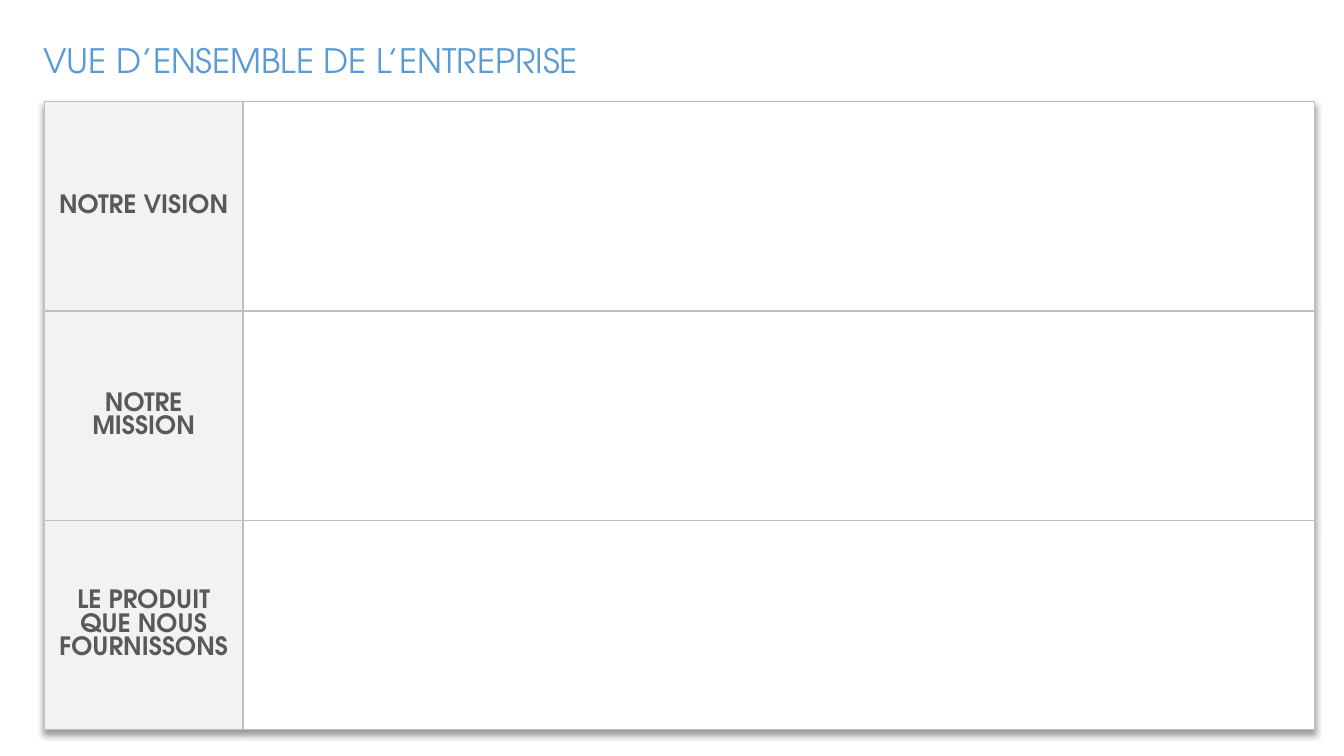
from dataclasses import dataclass

from lxml.etree import SubElement
from pptx import Presentation
from pptx.dml.color import RGBColor
from pptx.enum.text import MSO_ANCHOR, MSO_AUTO_SIZE, PP_ALIGN
from pptx.oxml import parse_xml
from pptx.oxml.ns import nsdecls, qn
from pptx.util import Inches, Pt


@dataclass(frozen=True)
class Theme:
    """Hold the colours, font and type sizes of the slide."""
    font: str = "TeX Gyre Adventor"
    heading: str = "5B9BD5"
    label: str = "595959"
    label_fill: str = "F2F2F2"
    answer_fill: str = "FFFFFF"
    border: str = "BFBFBF"
    heading_size: int = 24
    label_size: int = 18


THEME = Theme()
HEADING = "VUE D’ENSEMBLE DE L’ENTREPRISE"
TOPICS = ["NOTRE VISION", "NOTRE MISSION", "LE PRODUIT QUE NOUS FOURNISSONS"]


def write(frame, text, *, size, color, bold=False, align=PP_ALIGN.LEFT):
    """Write one formatted paragraph into a text frame."""
    paragraph = frame.paragraphs[0]
    paragraph.alignment = align
    run = paragraph.add_run()
    run.text = text
    run.font.name = THEME.font
    run.font.size = Pt(size)
    run.font.bold = bold
    run.font.color.rgb = RGBColor.from_string(color)


def style_cell(cell, fill):
    """Fill a cell and draw its four borders."""
    cell.vertical_anchor = MSO_ANCHOR.MIDDLE
    properties = cell._tc.get_or_add_tcPr()
    for side in ("a:lnL", "a:lnR", "a:lnT", "a:lnB"):
        line = SubElement(properties, qn(side), w=str(Pt(1)))
        SubElement(SubElement(line, qn("a:solidFill")), qn("a:srgbClr"), val=THEME.border)
    cell.fill.solid()
    cell.fill.fore_color.rgb = RGBColor.from_string(fill)


def add_heading(slide, left, top, width, height):
    """Place the slide heading in the title placeholder."""
    heading = slide.shapes.title
    heading.left, heading.top = Inches(left), Inches(top)
    heading.width, heading.height = Inches(width), Inches(height)
    frame = heading.text_frame
    frame.word_wrap = True
    frame.auto_size = MSO_AUTO_SIZE.SHAPE_TO_FIT_TEXT
    frame.vertical_anchor = MSO_ANCHOR.TOP
    write(frame, HEADING, size=THEME.heading_size, color=THEME.heading)


def add_overview(slide, left, top, width, height, label_width=1.97):
    """Place the overview table with one row per topic."""
    overview = slide.shapes.add_table(
        len(TOPICS), 2, Inches(left), Inches(top), Inches(width), Inches(height)
    ).table
    overview.first_row = overview.horz_banding = False
    overview._tbl.tblPr.insert(0, parse_xml(
        f'<a:effectLst {nsdecls("a")}><a:outerShdw blurRad="50800" dist="38100" '
        'dir="5400000" algn="t" rotWithShape="0"><a:srgbClr val="000000">'
        '<a:alpha val="40000"/></a:srgbClr></a:outerShdw></a:effectLst>'
    ))
    overview.columns[0].width = Inches(label_width)
    overview.columns[1].width = Inches(width - label_width)
    for row, topic in enumerate(TOPICS):
        overview.rows[row].height = Inches(height / len(TOPICS))
        label, answer = overview.cell(row, 0), overview.cell(row, 1)
        style_cell(label, THEME.label_fill)
        style_cell(answer, THEME.answer_fill)
        write(label.text_frame, topic, size=THEME.label_size, color=THEME.label,
              bold=True, align=PP_ALIGN.CENTER)


def main():
    """Build and save the company overview slide."""
    deck = Presentation()
    deck.slide_width, deck.slide_height = Inches(13.33), Inches(7.5)
    slide = deck.slides.add_slide(deck.slide_layouts[5])
    add_heading(slide, 0.33, 0.35, 8.08, 0.5)
    add_overview(slide, 0.44, 1.01, 12.6, 6.23)
    deck.save("out.pptx")


if __name__ == "__main__":
    main()
